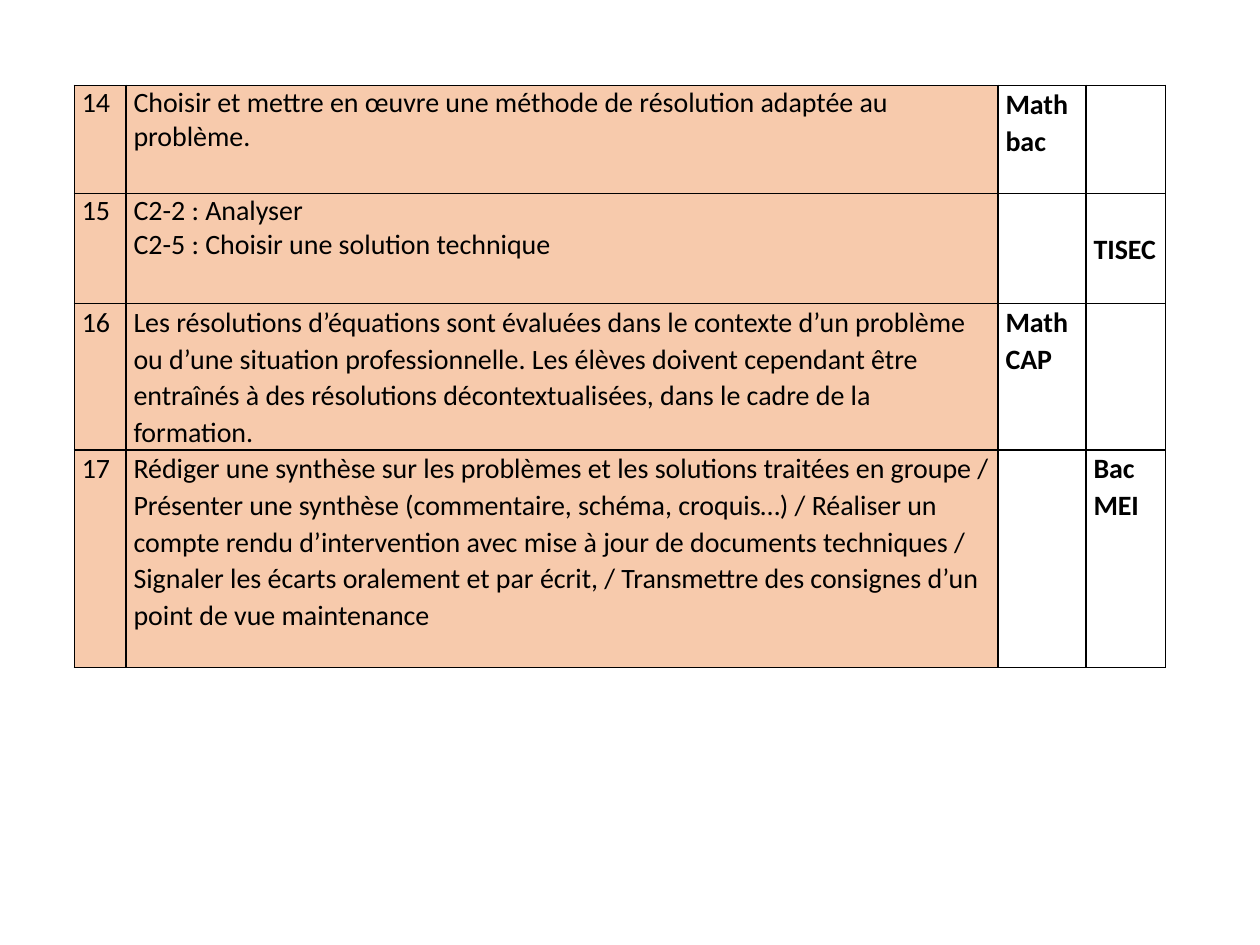
from dataclasses import dataclass

from lxml.etree import SubElement
from pptx import Presentation
from pptx.dml.color import RGBColor
from pptx.oxml.ns import qn
from pptx.table import _Cell as Cell
from pptx.util import Pt


@dataclass(frozen=True)
class Theme:
    font: str = "Calibri"
    size: float = 16
    ink: str = "000000"
    peach: str = "F7CAAC"
    white: str = "FFFFFF"
    border: float = 1
    inset: float = 4.25
    loose: float = 1.07


@dataclass(frozen=True)
class SkillRow:
    number: str
    skills: tuple[str, ...]
    general: str
    vocational: str
    height: float
    spacing: float


THEME = Theme()
LEFT, TOP = 42.5, 48.75
COLUMN_WIDTHS = (29.6, 498.3, 50.3, 45.3)
ROWS = (
    SkillRow("14", ("Choisir et mettre en œuvre une méthode de résolution adaptée au problème.",),
             "Math bac", "", 61.8, 1),
    SkillRow("15", ("C2-2 : Analyser", "C2-5 : Choisir une solution technique"),
             "", " TISEC", 62.8, 1),
    SkillRow("16", ("Les résolutions d’équations sont évaluées dans le contexte d’un problème ou "
                    "d’une situation professionnelle. Les élèves doivent cependant être entraînés "
                    "à des résolutions décontextualisées, dans le cadre de la formation.",),
             "Math CAP", "", 83.6, THEME.loose),
    SkillRow("17", ("Rédiger une synthèse sur les problèmes et les solutions traitées en groupe / "
                    "Présenter une synthèse (commentaire, schéma, croquis…) / Réaliser un compte "
                    "rendu d’intervention avec mise à jour de documents techniques / Signaler les "
                    "écarts oralement et par écrit, / Transmettre des consignes d’un point de vue "
                    "maintenance",),
             "", "Bac MEI", 124.4, THEME.loose),
)


def write_text(cell: Cell, *lines: str, bold: bool = False, spacing: float = 1) -> None:
    """Write one formatted paragraph per line into a cell."""
    frame = cell.text_frame
    for index, line in enumerate(lines):
        paragraph = frame.add_paragraph() if index else frame.paragraphs[0]
        paragraph.line_spacing = spacing
        paragraph.font.size = Pt(THEME.size)
        if line:
            run = paragraph.add_run()
            run.text = line
            run.font.name = THEME.font
            run.font.size = Pt(THEME.size)
            run.font.bold = bold
            run.font.color.rgb = RGBColor.from_string(THEME.ink)


def style_cell(cell: Cell, fill: str) -> None:
    """Give a cell its margins, borders and fill."""
    cell.margin_left = cell.margin_right = Pt(THEME.inset)
    cell.margin_top = cell.margin_bottom = 0
    properties = cell._tc.get_or_add_tcPr()
    for side in ("lnL", "lnR", "lnT", "lnB"):
        line = SubElement(properties, qn(f"a:{side}"), w=str(Pt(THEME.border)))
        solid = SubElement(line, qn("a:solidFill"))
        SubElement(solid, qn("a:srgbClr"), val=THEME.ink)
    cell.fill.solid()
    cell.fill.fore_color.rgb = RGBColor.from_string(fill)


def main() -> None:
    """Build the skills table slide and save it."""
    presentation = Presentation()
    presentation.slide_width, presentation.slide_height = Pt(720), Pt(540)
    slide = presentation.slides.add_slide(presentation.slide_layouts[6])
    table = slide.shapes.add_table(
        len(ROWS), len(COLUMN_WIDTHS), Pt(LEFT), Pt(TOP),
        Pt(sum(COLUMN_WIDTHS)), Pt(sum(row.height for row in ROWS))).table
    table.first_row = table.horz_banding = False
    for column, width in zip(table.columns, COLUMN_WIDTHS):
        column.width = Pt(width)
    for table_row, row in zip(table.rows, ROWS):
        table_row.height = Pt(row.height)
        number, skills, general, vocational = table_row.cells
        for cell in (number, skills):
            style_cell(cell, THEME.peach)
        for cell in (general, vocational):
            style_cell(cell, THEME.white)
        write_text(number, row.number, spacing=row.spacing)
        write_text(skills, *row.skills, spacing=row.spacing)
        write_text(general, row.general, bold=True, spacing=THEME.loose)
        write_text(vocational, row.vocational, bold=True, spacing=THEME.loose)
    presentation.save("out.pptx")


if __name__ == "__main__":
    main()
